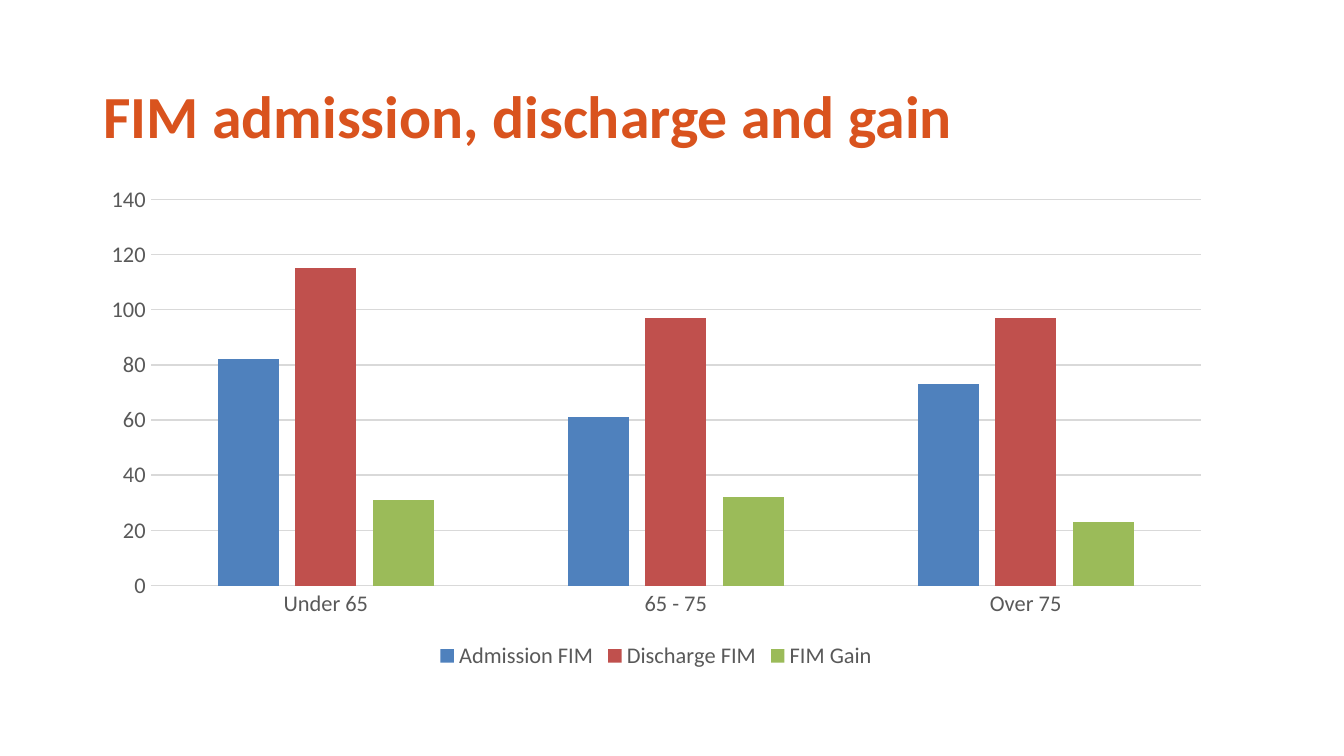
from dataclasses import dataclass

import pptx
import pptx.chart.data
import pptx.dml.color
import pptx.enum.chart
import pptx.enum.text
import pptx.util

Cm = pptx.util.Cm


@dataclass(frozen=True)
class Theme:
    font: str = "Calibri"
    title: str = "D9531E"
    label: str = "595959"
    rule: str = "D9D9D9"
    series: tuple = ("4F81BD", "C0504D", "9BBB59")
    title_size: int = 32
    label_size: int = 12
    rule_width: float = 0.75


THEME = Theme()
AGE_GROUPS = ("Under 65", "65 - 75", "Over 75")
FIM_SCORES = {
    "Admission FIM": (82, 61, 73),
    "Discharge FIM": (115, 97, 97),
    "FIM Gain": (31, 32, 23),
}


def rgb(value):
    return pptx.dml.color.RGBColor.from_string(value)


def format_font(font, size=THEME.label_size, color=THEME.label, bold=False):
    font.name = THEME.font
    font.size = pptx.util.Pt(size)
    font.bold = bold
    font.color.rgb = rgb(color)


def write_text(tf, text, align=pptx.enum.text.PP_ALIGN.LEFT, **font_format):
    p = tf.paragraphs[0]
    p.alignment = align
    r = p.add_run()
    r.text = text
    format_font(r.font, **font_format)


def format_rule(line):
    line.color.rgb = rgb(THEME.rule)
    line.width = pptx.util.Pt(THEME.rule_width)


def add_title(slide, box, text):
    sp = slide.shapes.title
    sp.left, sp.top, sp.width, sp.height = box
    tf = sp.text_frame
    tf.word_wrap = True
    tf.auto_size = pptx.enum.text.MSO_AUTO_SIZE.NONE
    tf.vertical_anchor = pptx.enum.text.MSO_ANCHOR.MIDDLE
    write_text(tf, text, size=THEME.title_size, color=THEME.title, bold=True)


def format_axes(chart):
    for axis in (chart.category_axis, chart.value_axis):
        axis.major_tick_mark = pptx.enum.chart.XL_TICK_MARK.NONE
        axis.minor_tick_mark = pptx.enum.chart.XL_TICK_MARK.NONE
        format_font(axis.tick_labels.font)
    format_rule(chart.category_axis.format.line)

    scores = chart.value_axis
    scores.minimum_scale, scores.maximum_scale = 0, 140
    scores.major_unit = 20
    scores.format.line.fill.background()
    scores.has_major_gridlines = True
    format_rule(scores.major_gridlines.format.line)


def add_fim_chart(slide, box):
    data = pptx.chart.data.CategoryChartData(number_format="General")
    data.categories = AGE_GROUPS
    for name, values in FIM_SCORES.items():
        data.add_series(name, values)
    chart = slide.shapes.add_chart(
        pptx.enum.chart.XL_CHART_TYPE.COLUMN_CLUSTERED, *box, data
    ).chart
    format_font(chart.font)
    chart.has_title = False
    format_axes(chart)

    plot = chart.plots[0]
    plot.vary_by_categories = False
    plot.gap_width = 219
    plot.overlap = -27
    for series, color in zip(plot.series, THEME.series):
        series.invert_if_negative = False
        series.format.fill.solid()
        series.format.fill.fore_color.rgb = rgb(color)

    chart.has_legend = True
    chart.legend.position = pptx.enum.chart.XL_LEGEND_POSITION.BOTTOM
    chart.legend.include_in_layout = False
    format_font(chart.legend.font)


def main():
    prs = pptx.Presentation()
    prs.slide_width, prs.slide_height = Cm(25.4), Cm(14.29)
    slide = prs.slides.add_slide(prs.slide_layouts.get_by_name("Title Only"))
    add_title(slide, (Cm(1.7), Cm(1.2), Cm(18.8), Cm(1.95)),
              "FIM admission, discharge and gain")
    add_fim_chart(slide, (Cm(1.68), Cm(3.33), Cm(21.44), Cm(9.42)))
    prs.save("out.pptx")


if __name__ == "__main__":
    main()
